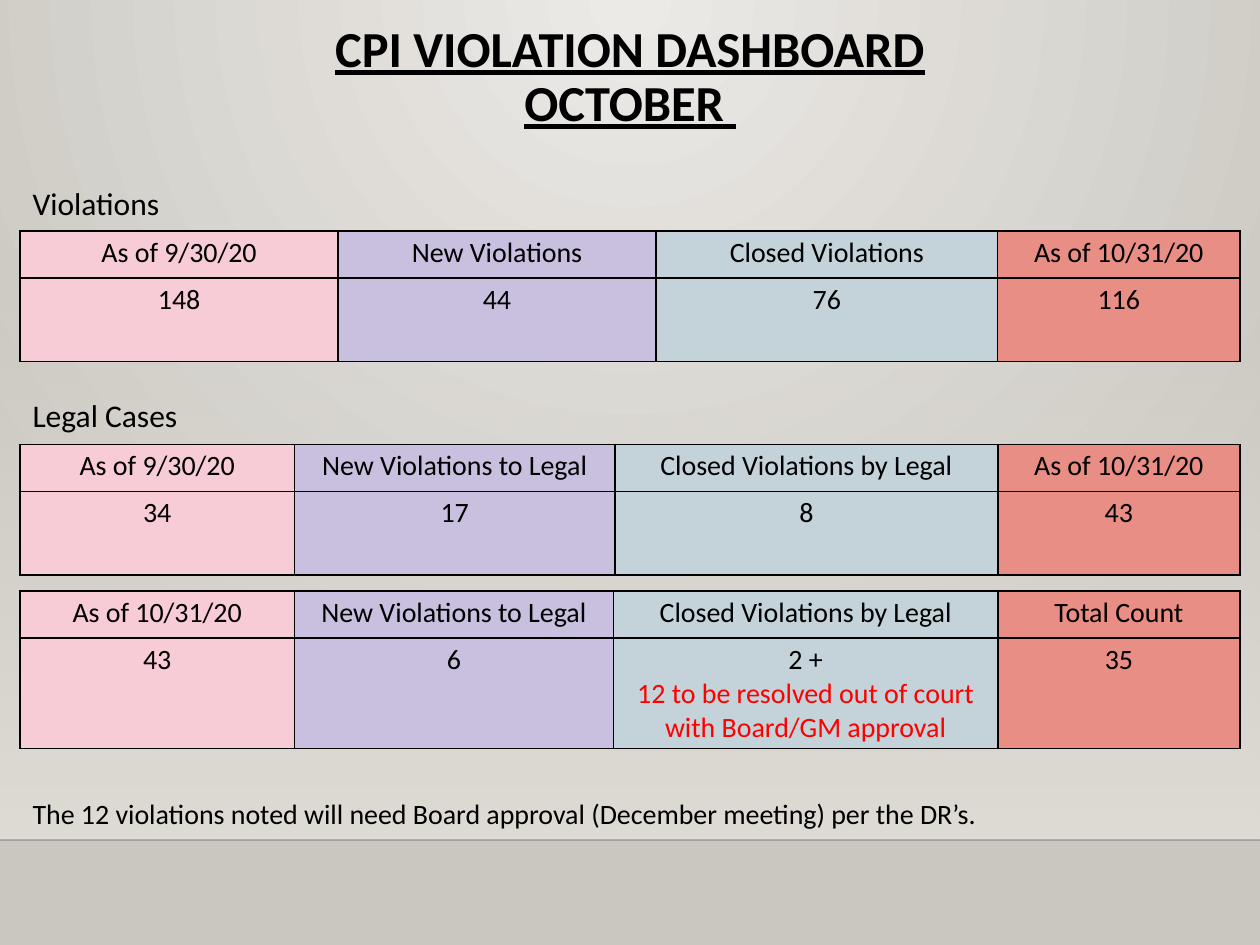
import pptx
import pptx.util
import pptx.dml.color
import pptx.enum.text
import pptx.enum.shapes
import pptx.oxml.ns
import lxml.etree

Pt = pptx.util.Pt
ALIGN = pptx.enum.text.PP_ALIGN
HEX = {
    "light": "ECEAE7", "stone": "CAC7C1", "sand": "DFDBD5", "edge": "000001",
    "ink": "000000", "alert": "FF0000",
    "pink": "F7CCD6", "violet": "C9BFDF", "blue": "C3D3D9", "coral": "E88E84",
}
FILLS = ("pink", "violet", "blue", "coral")
TITLE = {"size": Pt(28.8), "bold": True, "underline": True}
HEAD = {"size": Pt(18)}
BODY = {"size": Pt(16)}
PADS = {"margin_left": 5.2, "margin_right": 5.2, "margin_top": 2.5, "margin_bottom": 2.5}
LEFT = 11.5
TABLES = (
    (132, (181.7, 181.7, 195.3, 138.4), (27, 47.7), (
        ("As of 9/30/20", "New Violations", "Closed Violations", "As of 10/31/20"),
        ("148", "44", "76", "116"))),
    (254, (156.7, 183.2, 218.8, 138.4), (27, 47.7), (
        ("As of 9/30/20", "New Violations to Legal", "Closed Violations by Legal", "As of 10/31/20"),
        ("34", "17", "8", "43"))),
    (337.7, (156.7, 182.4, 219.6, 138.4), (27, 63), (
        ("As of 10/31/20", "New Violations to Legal", "Closed Violations by Legal", "Total Count"),
        ("43", "6", ("2 +", "12 to be resolved out of court with Board/GM approval"), "35"))),
)
LABELS = (
    ("Violations", 101.5, 258.5, HEAD),
    ("Legal Cases", 222.5, 258.5, HEAD),
    ("The 12 violations noted will need Board approval (December meeting) per the DR’s.", 451.5, 633, BODY),
)


class Board:
    """Holds the style and the current slide, and draws each kind of element."""

    def __init__(self, deck):
        self.face = "Calibri"
        self.slide = deck.slides.add_slide(deck.slide_layouts[6])
        self.shapes = self.slide.shapes

    def rgb(self, name):
        return pptx.dml.color.RGBColor.from_string(HEX[name])

    def node(self, base, tag, **attrs):
        return lxml.etree.SubElement(base, pptx.oxml.ns.qn("a:" + tag), attrs)

    def find(self, base, tag):
        return base.find(".//" + pptx.oxml.ns.qn("a:" + tag))

    def fade(self, fill, names, root):
        fill.gradient()
        for place, (stop, name) in enumerate(zip(fill.gradient_stops, names)):
            stop.color.rgb = self.rgb(name)
            stop.position = place
        grad = self.find(root, "gradFill")
        for kid in list(grad)[1:]:
            grad.remove(kid)
        return grad

    def ground(self):
        fill = self.slide.background.fill
        grad = self.fade(fill, ("light", "stone"), self.slide.element)
        way = self.node(grad, "path", path="circle")
        self.node(way, "fillToRect", l="43000", t="0", r="43000", b="100000")

    def veil(self, top, high):
        kind = pptx.enum.shapes.MSO_SHAPE.RECTANGLE
        box = self.shapes.add_shape(kind, 0, Pt(top), Pt(720), Pt(high))
        box.shadow.inherit = False
        box.line.fill.background()
        grad = self.fade(box.fill, ("sand", "sand"), box.element)
        self.node(self.find(grad, "srgbClr"), "alpha", val="0")
        self.node(grad, "lin", ang="5400000", scaled="0")

    def rule(self, top):
        kind = pptx.enum.shapes.MSO_CONNECTOR.STRAIGHT
        line = self.shapes.add_connector(kind, 0, Pt(top), Pt(720), Pt(top))
        line.line.width = Pt(1)
        line.line.color.rgb = self.rgb("edge")
        props = line.element.spPr
        self.node(self.find(props, "srgbClr"), "alpha", val="20000")
        self.node(props, "effectLst")

    def put(self, para, words, form, color="ink", align=ALIGN.CENTER):
        para.text = words
        para.alignment = align
        for run in para.runs:
            for key, value in {"name": self.face, **form}.items():
                setattr(run.font, key, value)
            run.font.color.rgb = self.rgb(color)

    def text(self, words, left, top, wide, high, form, align=ALIGN.LEFT, space=1.0):
        frame = self.shapes.add_textbox(Pt(left), Pt(top), Pt(wide), Pt(high)).text_frame
        frame.word_wrap = True
        para = frame.paragraphs[0]
        para.line_spacing = space
        self.put(para, words, form, align=align)

    def cell(self, cell, words, fill):
        for key, value in PADS.items():
            setattr(cell, key, Pt(value))
        frame = cell.text_frame
        lines = (words,) if isinstance(words, str) else words
        for spot, line in enumerate(lines):
            para = frame.add_paragraph() if spot else frame.paragraphs[0]
            self.put(para, line, BODY, "alert" if spot else "ink")
        props = cell._tc.get_or_add_tcPr()
        for side in ("lnL", "lnR", "lnT", "lnB"):
            edge = self.node(props, side, w=str(Pt(1)))
            self.node(self.node(edge, "solidFill"), "srgbClr", val=HEX["ink"])
        self.node(self.node(props, "solidFill"), "srgbClr", val=HEX[fill])

    def table(self, top, cols, rows, data):
        frame = self.shapes.add_table(len(rows), len(cols), Pt(LEFT), Pt(top), Pt(sum(cols)), Pt(sum(rows)))
        grid = frame.table
        grid.first_row = grid.horz_banding = False
        for col, wide in zip(grid.columns, cols):
            col.width = Pt(wide)
        for row, high, words in zip(grid.rows, rows, data):
            row.height = Pt(high)
            for cell, word, fill in zip(row.cells, words, FILLS):
                self.cell(cell, word, fill)


def main():
    deck = pptx.Presentation()
    deck.slide_width, deck.slide_height = Pt(720), Pt(540)
    board = Board(deck)
    board.ground()
    board.veil(158.4, 321.6)
    board.rule(480)
    board.text("CPI VIOLATION DASHBOARD\vOCTOBER ", 50, 10, 620, 43, TITLE, ALIGN.CENTER, 0.9)
    for item in TABLES:
        board.table(*item)
    for words, top, wide, form in LABELS:
        board.text(words, LEFT, top, wide, 28, form)
    deck.save("out.pptx")


if __name__ == "__main__":
    main()
